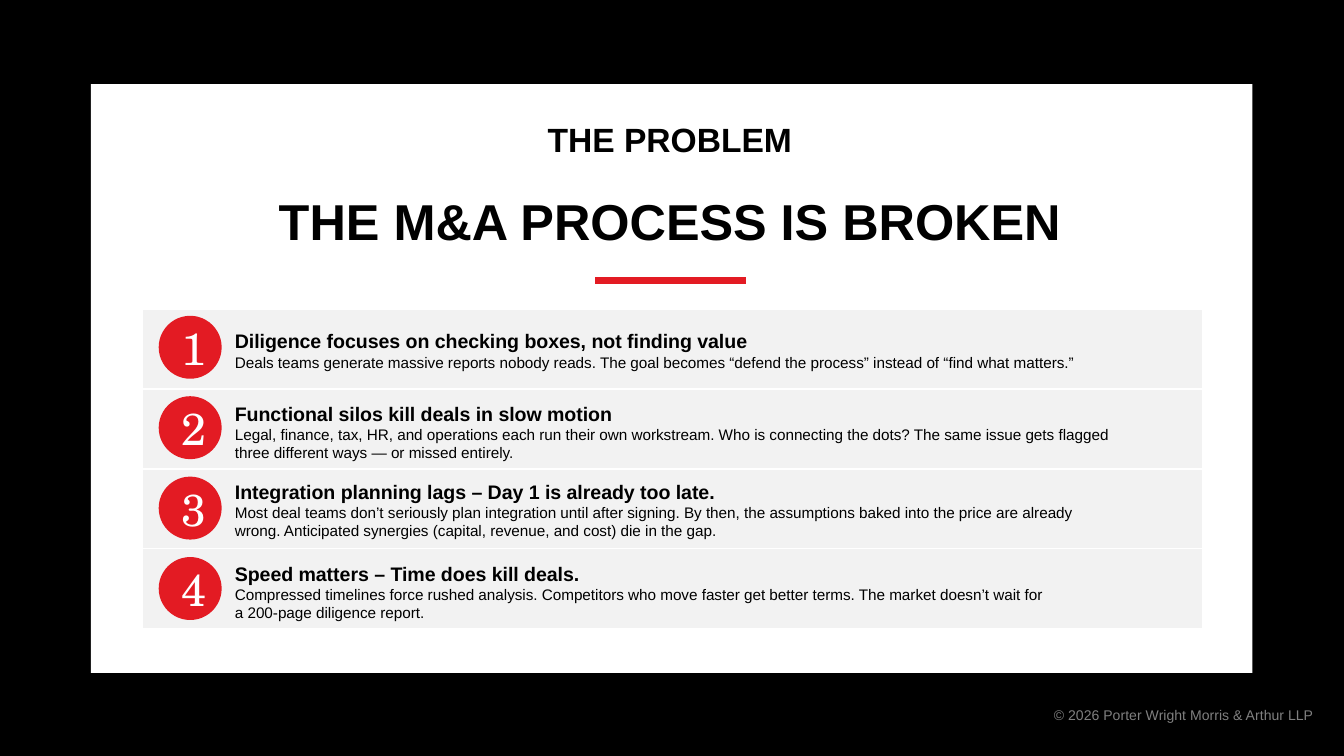
from lxml.etree import SubElement
from pptx import Presentation
from pptx.dml.color import RGBColor
from pptx.enum.shapes import MSO_CONNECTOR, MSO_SHAPE
from pptx.enum.text import MSO_ANCHOR, MSO_AUTO_SIZE, PP_ALIGN
from pptx.oxml.ns import qn
from pptx.util import Cm, Pt

BLACK = RGBColor(0x00, 0x00, 0x00)
WHITE = RGBColor(0xFF, 0xFF, 0xFF)
RED = RGBColor(0xE3, 0x1B, 0x23)
PALE_GRAY = RGBColor(0xF2, 0xF2, 0xF2)
GRAY = RGBColor(0x80, 0x80, 0x80)
SANS, SERIF = "Arial", "TeX Gyre Schola"

TITLE_LINES = [("THE PROBLEM", 18, 0), ("THE M&A PROCESS IS BROKEN", 27, 20)]
FOOTER = "© 2026 Porter Wright Morris & Arthur LLP"

# heading, detail, text top, text width, text height (cm)
PROBLEMS = [
    ("Diligence focuses on checking boxes, not finding value",
     "Deals teams generate massive reports nobody reads. The goal becomes "
     "“defend the process” instead of “find what matters.”",
     6.10, 18.54, 0.94),
    ("Functional silos kill deals in slow motion",
     "Legal, finance, tax, HR, and operations each run their own workstream. "
     "Who is connecting the dots? The same issue gets flagged three different "
     "ways — or missed entirely.",
     7.47, 17.04, 1.24),
    ("Integration planning lags – Day 1 is already too late.",
     "Most deal teams don’t seriously plan integration until after signing. "
     "By then, the assumptions baked into the price are already wrong. "
     "Anticipated synergies (capital, revenue, and cost) die in the gap.",
     8.94, 17.04, 1.24),
    ("Speed matters – Time does kill deals.",
     "Compressed timelines force rushed analysis. Competitors who move faster "
     "get better terms. The market doesn’t wait for\n"
     "a 200-page diligence report.",
     10.49, 18.54, 1.24),
]

TABLE_LEFT, TABLE_TOP, TABLE_WIDTH, ROW_HEIGHT = 2.69, 5.84, 20.04, 1.51
CIRCLE_LEFT, CIRCLE_TOP, CIRCLE_SIZE, CIRCLE_PITCH = 3.0, 5.97, 1.19, 1.52
TEXT_LEFT = 4.19


def add_text(paragraph, text, size, color, font=SANS, bold=False):
    """Add one run per line of text, with line breaks between them."""
    for number, line in enumerate(text.split("\n")):
        if number:
            paragraph.add_line_break()
        run = paragraph.add_run()
        run.text = line
        run.font.name, run.font.size, run.font.bold = font, Pt(size), bold
        run.font.color.rgb = color


def add_filled_shape(slide, kind, left, top, width, height, color):
    shape = slide.shapes.add_shape(kind, Cm(left), Cm(top), Cm(width), Cm(height))
    shape.shadow.inherit = False
    shape.fill.solid()
    shape.fill.fore_color.rgb = color
    shape.line.fill.background()
    return shape


def add_text_frame(slide, left, top, width, height):
    box = slide.shapes.add_textbox(Cm(left), Cm(top), Cm(width), Cm(height))
    box.text_frame.word_wrap = True
    return box.text_frame


def set_borders(cell, color, points):
    properties = cell._tc.get_or_add_tcPr()
    for position, side in enumerate(("a:lnL", "a:lnR", "a:lnT", "a:lnB")):
        border = SubElement(properties, qn(side), w=str(Pt(points)))
        fill = SubElement(border, qn("a:solidFill"))
        SubElement(fill, qn("a:srgbClr"), val=str(color))
        properties.insert(position, border)


def add_title(slide, panel):
    title = slide.shapes.title
    panel._element.addnext(title._element)
    title.left, title.top, title.width, title.height = (
        Cm(1.98), Cm(1.88), Cm(21.36), Cm(3.0))
    frame = title.text_frame
    frame.auto_size = MSO_AUTO_SIZE.NONE
    frame.vertical_anchor = MSO_ANCHOR.BOTTOM
    for number, (text, size, gap) in enumerate(TITLE_LINES):
        paragraph = frame.add_paragraph() if number else frame.paragraphs[0]
        paragraph.alignment = PP_ALIGN.CENTER
        paragraph.line_spacing = 0.9
        paragraph.space_before = Pt(gap)
        add_text(paragraph, text, size, BLACK, bold=True)


def add_title_rule(slide):
    rule = slide.shapes.add_connector(
        MSO_CONNECTOR.STRAIGHT, Cm(11.25), Cm(5.3), Cm(14.1), Cm(5.3))
    rule.line.color.rgb = RED
    rule.line.width = Pt(4)
    SubElement(rule._element.spPr, qn("a:effectLst"))


def add_row_table(slide):
    table = slide.shapes.add_table(
        len(PROBLEMS), 1, Cm(TABLE_LEFT), Cm(TABLE_TOP),
        Cm(TABLE_WIDTH), Cm(ROW_HEIGHT * len(PROBLEMS))).table
    table.first_row = table.horz_banding = False
    for row in table.rows:
        row.height = Cm(ROW_HEIGHT)
        cell = row.cells[0]
        cell.fill.solid()
        cell.fill.fore_color.rgb = PALE_GRAY
        set_borders(cell, WHITE, 1)


def add_problem(slide, index, heading, detail, top, width, height):
    circle = add_filled_shape(
        slide, MSO_SHAPE.OVAL, CIRCLE_LEFT, CIRCLE_TOP + index * CIRCLE_PITCH,
        CIRCLE_SIZE, CIRCLE_SIZE, RED)
    circle.text_frame.vertical_anchor = MSO_ANCHOR.MIDDLE
    number = circle.text_frame.paragraphs[0]
    number.alignment = PP_ALIGN.CENTER
    add_text(number, str(index + 1), 24, WHITE, font=SERIF)

    frame = add_text_frame(slide, TEXT_LEFT, top, width, height)
    add_text(frame.paragraphs[0], heading, 10.5, BLACK, bold=True)
    add_text(frame.add_paragraph(), detail, 8.2, BLACK)


def add_footer(slide):
    frame = add_text_frame(slide, 16.48, 12.73, 8.59, 1.57)
    frame.vertical_anchor = MSO_ANCHOR.MIDDLE
    frame.paragraphs[0].alignment = PP_ALIGN.RIGHT
    add_text(frame.paragraphs[0], FOOTER, 7.5, GRAY)


def main():
    presentation = Presentation()
    presentation.slide_width, presentation.slide_height = Cm(25.4), Cm(14.29)
    slide = presentation.slides.add_slide(presentation.slide_layouts[5])
    slide.background.fill.solid()
    slide.background.fill.fore_color.rgb = BLACK

    panel = add_filled_shape(
        slide, MSO_SHAPE.RECTANGLE, 1.72, 1.59, 21.95, 11.13, WHITE)
    add_title(slide, panel)
    add_title_rule(slide)
    add_row_table(slide)
    for index, problem in enumerate(PROBLEMS):
        add_problem(slide, index, *problem)
    add_footer(slide)
    presentation.save("out.pptx")


if __name__ == "__main__":
    main()
